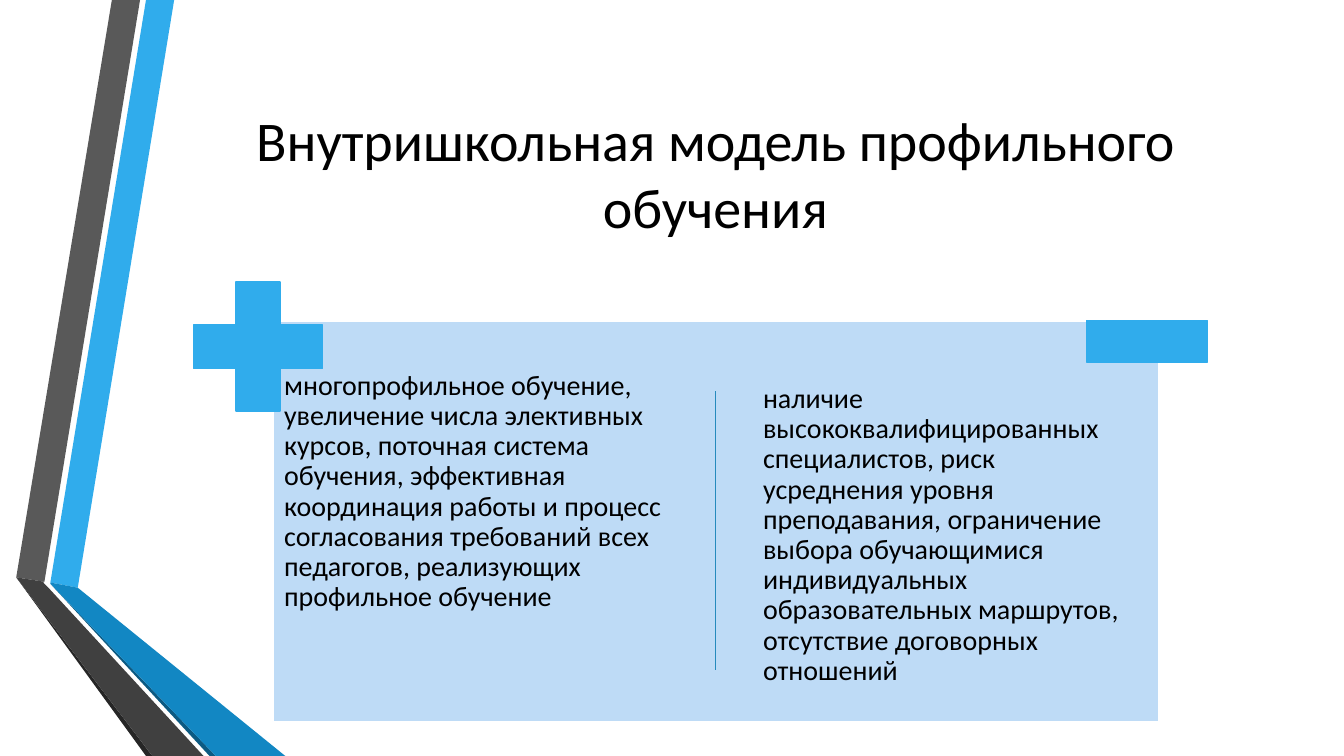
import pptx
import pptx.dml.color
import pptx.enum.shapes
import pptx.enum.text
import pptx.oxml
import pptx.util
from dataclasses import dataclass

Cm = pptx.util.Cm
Pt = pptx.util.Pt
SHAPE = pptx.enum.shapes.MSO_SHAPE
ALIGN = pptx.enum.text.PP_ALIGN
ANCHOR = pptx.enum.text.MSO_ANCHOR


@dataclass(frozen=True)
class Theme:
    font: str = "Calibri"
    title_size: int = 40
    body_size: int = 20
    line_width: float = 1.25
    text: str = "000000"
    white: str = "FFFFFF"
    panel: str = "BEDBF6"
    accent: str = "30ACEC"
    divider: str = "268ABD"
    fold: str = "1287C3"
    fold_edge: str = "0C5A82"
    grey: str = "595959"
    grey_fold: str = "404040"
    grey_edge: str = "262626"


THEME = Theme()

RIBBONS = [
    (THEME.accent, [(1.27, 14.68), (1.96, 14.81), (4.39, 0), (3.68, 0)]),
    (THEME.grey, [(3.53, 0), (2.82, 0), (0.41, 14.55), (1.12, 14.66)]),
    (THEME.grey_edge, [(0.41, 14.55), (3.68, 19.05), (3.84, 19.05)]),
    (THEME.fold_edge, [(1.27, 14.71), (5.28, 19.05), (5.44, 19.05)]),
    (THEME.fold, [(1.27, 14.68), (1.27, 14.71), (5.44, 19.05), (7.19, 19.05), (1.96, 14.81)]),
    (THEME.grey_fold, [(5.13, 19.05), (1.22, 14.81), (1.09, 14.68), (1.12, 14.66),
                       (0.41, 14.55), (3.84, 19.05)]),
]

TITLE = "Внутришкольная модель профильного обучения"
PROS = ("многопрофильное обучение, увеличение числа элективных курсов, поточная система "
        "обучения, эффективная координация работы и процесс согласования требований всех "
        "педагогов, реализующих профильное обучение")
CONS = ("наличие высококвалифицированных специалистов, риск усреднения уровня преподавания, "
        "ограничение выбора обучающимися индивидуальных образовательных маршрутов, "
        "отсутствие договорных отношений")


def rgb(value):
    return pptx.dml.color.RGBColor.from_string(value)


def apply(obj, values):
    for name, value in values.items():
        setattr(obj, name, value)


def box(*lengths):
    return [Cm(length) for length in lengths]


def paint(sp, fill, line=None):
    sp.shadow.inherit = False
    sp.fill.solid()
    sp.fill.fore_color.rgb = rgb(fill)
    if line is None:
        sp.line.fill.background()
    else:
        sp.line.color.rgb = rgb(line)
        sp.line.width = Pt(THEME.line_width)


def write(tf, text, size, frame, paragraph):
    apply(tf, {"word_wrap": True, "auto_size": pptx.enum.text.MSO_AUTO_SIZE.NONE, **frame})
    p = tf.paragraphs[0]
    apply(p, paragraph)
    r = p.add_run()
    r.text = text
    apply(r.font, {"name": THEME.font, "size": Pt(size)})
    r.font.color.rgb = rgb(THEME.text)


def add_ribbon(s, fill, points):
    start, *rest = [box(*point) for point in points]
    builder = s.shapes.build_freeform(*start)
    builder.add_line_segments(rest, close=True)
    paint(builder.convert_to_shape(), fill)


def set_title(s, text, left, top, width, height):
    sp = s.shapes.title
    apply(sp, {"left": Cm(left), "top": Cm(top), "width": Cm(width), "height": Cm(height)})
    write(sp.text_frame, text, THEME.title_size,
          {"vertical_anchor": ANCHOR.MIDDLE}, {"alignment": ALIGN.CENTER})


def add_block(s, kind, place, fill, line):
    sp = s.shapes.add_shape(kind, *box(*place))
    paint(sp, fill, line)
    return sp


def add_body(s, text, *place):
    sp = s.shapes.add_textbox(*box(*place))
    margins = {f"margin_{side}": Cm(0.1) for side in ("left", "top", "right", "bottom")}
    write(sp.text_frame, text, THEME.body_size,
          {"vertical_anchor": ANCHOR.TOP, **margins},
          {"alignment": ALIGN.LEFT, "line_spacing": 0.9})


def add_divider(s, *ends):
    sp = s.shapes.add_connector(pptx.enum.shapes.MSO_CONNECTOR.STRAIGHT, *box(*ends))
    sp.line.color.rgb = rgb(THEME.divider)
    sp.line.width = Pt(THEME.line_width)
    effects = pptx.oxml.parse_xml(
        '<a:effectLst xmlns:a="http://schemas.openxmlformats.org/drawingml/2006/main"/>')
    sp._element.spPr.append(effects)


def main():
    prs = pptx.Presentation()
    apply(prs, {"slide_width": Cm(33.87), "slide_height": Cm(19.05)})
    s = prs.slides.add_slide(prs.slide_layouts.get_by_name("Title Only"))

    for fill, points in RIBBONS:
        add_ribbon(s, fill, points)
    set_title(s, TITLE, 4.11, 1.91, 27.84, 4.88)

    add_block(s, SHAPE.RECTANGLE, (6.88, 8.1, 22.33, 10.08), THEME.panel, THEME.white)
    add_body(s, PROS, 7.06, 9.25, 10.74, 7.95)
    add_body(s, CONS, 19.13, 9.58, 9.63, 7.65)
    plus = add_block(s, SHAPE.CROSS, (4.88, 7.11, 3.25, 3.25), THEME.accent, THEME.accent)
    plus.adjustments[0] = 0.33
    add_block(s, SHAPE.RECTANGLE, (27.38, 8.08, 3.05, 1.04), THEME.accent, THEME.accent)
    add_divider(s, 18.03, 9.86, 18.03, 16.89)

    prs.save("out.pptx")


if __name__ == "__main__":
    main()
